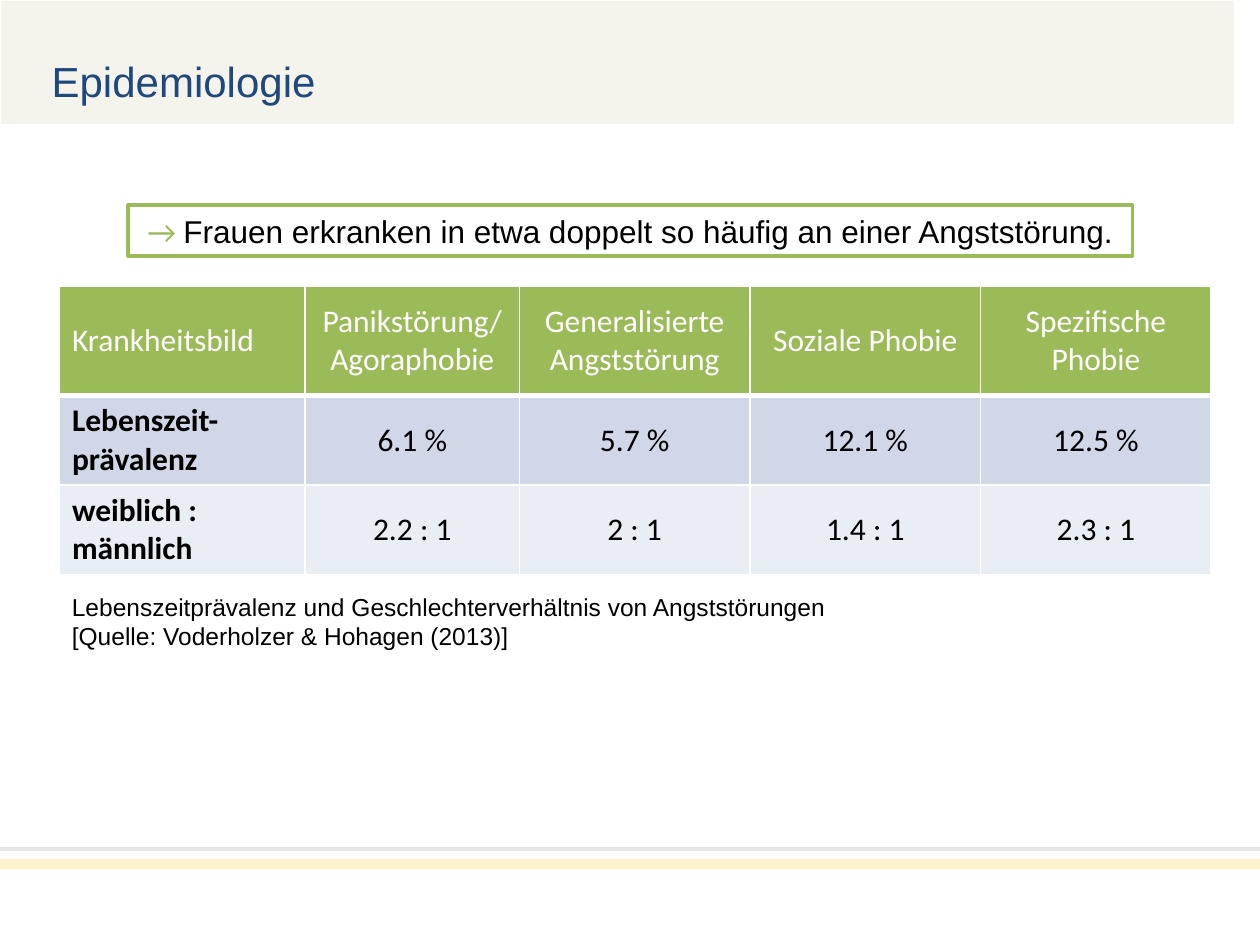
from dataclasses import dataclass

from lxml import etree
from pptx import Presentation
from pptx.dml.color import RGBColor
from pptx.enum.shapes import MSO_CONNECTOR, MSO_SHAPE
from pptx.enum.text import MSO_ANCHOR, PP_ALIGN
from pptx.oxml.ns import qn
from pptx.util import Pt

LEFT, CENTER = PP_ALIGN.LEFT, PP_ALIGN.CENTER
TOP, MIDDLE = MSO_ANCHOR.TOP, MSO_ANCHOR.MIDDLE
RECTANGLE, STRAIGHT = MSO_SHAPE.RECTANGLE, MSO_CONNECTOR.STRAIGHT
TITLE_ONLY = 5

GREEN, WHITE, BLACK = "9BBB59", "FFFFFF", "000000"
SLIDE_WIDTH, SLIDE_HEIGHT = 720, 540
MARGIN = 34
COLUMN_WIDTHS = [140.4, 122.4, 131.8, 131.8, 131.8]


@dataclass
class Box:
    left: float
    top: float
    width: float
    height: float

    def lengths(self) -> list:
        return [Pt(value) for value in (self.left, self.top, self.width, self.height)]


@dataclass
class Style:
    size: float
    font: str
    color: str
    bold: bool = False


@dataclass
class TableRow:
    height: float
    fill: str
    text_color: str
    bold_label: bool
    bottom_border: float
    texts: list[str]


ROWS = [
    TableRow(62.6, GREEN, WHITE, False, 3,
             ["Krankheitsbild", "Panikstörung/\nAgoraphobie", "Generalisierte\nAngststörung",
              "Soziale Phobie", "Spezifische Phobie"]),
    TableRow(50.4, "D0D8E8", BLACK, True, 1,
             ["Lebenszeit-prävalenz", "6.1 %", "5.7 %", "12.1 %", "12.5 %"]),
    TableRow(50.4, "E9EDF4", BLACK, True, 1,
             ["weiblich : männlich", "2.2 : 1", "2 : 1", "1.4 : 1", "2.3 : 1"]),
]


def rgb(color: str) -> RGBColor:
    return RGBColor.from_string(color)


def add_run(paragraph, text: str, style: Style) -> None:
    """Add text to the paragraph, turning newlines into line breaks."""
    for index, line in enumerate(text.split("\n")):
        if index:
            paragraph.add_line_break()
        run = paragraph.add_run()
        run.text = line
        run.font.size = Pt(style.size)
        run.font.name = style.font
        run.font.bold = style.bold
        run.font.color.rgb = rgb(style.color)


def add_rectangle(slide, box: Box, fill: str = "", line: str = "", line_width: float = 0):
    shape = slide.shapes.add_shape(RECTANGLE, *box.lengths())
    shape.shadow.inherit = False
    if fill:
        shape.fill.solid()
        shape.fill.fore_color.rgb = rgb(fill)
    else:
        shape.fill.background()
    if line:
        shape.line.color.rgb = rgb(line)
        shape.line.width = Pt(line_width)
    else:
        shape.line.fill.background()
    return shape


def add_title(slide, band) -> None:
    """Fill the title placeholder and keep it in front of the band."""
    title = slide.shapes.title
    title.left, title.top, title.width, title.height = Box(22.3, 28, 546, 36).lengths()
    title.text_frame.vertical_anchor = TOP
    paragraph = title.text_frame.paragraphs[0]
    paragraph.alignment = LEFT
    add_run(paragraph, "Epidemiologie", Style(24, "Arial", "1F497D"))
    title.element.addprevious(band.element)


def set_borders(cell, bottom_width: float) -> None:
    properties = cell._tc.get_or_add_tcPr()
    for side, width in (("lnL", 1), ("lnR", 1), ("lnT", 1), ("lnB", bottom_width)):
        border = etree.SubElement(properties, qn(f"a:{side}"), w=str(Pt(width)))
        fill = etree.SubElement(border, qn("a:solidFill"))
        etree.SubElement(fill, qn("a:srgbClr"), val=WHITE)


def add_prevalence_table(slide) -> None:
    box = Box(MARGIN, 163.4, sum(COLUMN_WIDTHS), sum(row.height for row in ROWS))
    table = slide.shapes.add_table(len(ROWS), len(COLUMN_WIDTHS), *box.lengths()).table
    for column, width in zip(table.columns, COLUMN_WIDTHS):
        column.width = Pt(width)
    for row_index, row in enumerate(ROWS):
        table.rows[row_index].height = Pt(row.height)
        for column_index, text in enumerate(row.texts):
            is_label = column_index == 0
            cell = table.cell(row_index, column_index)
            set_borders(cell, row.bottom_border)
            cell.fill.solid()
            cell.fill.fore_color.rgb = rgb(row.fill)
            cell.vertical_anchor = MIDDLE
            paragraph = cell.text_frame.paragraphs[0]
            paragraph.alignment = LEFT if is_label else CENTER
            bold = is_label and row.bold_label
            add_run(paragraph, text, Style(18, "Calibri", row.text_color, bold))


def add_caption(slide) -> None:
    box = Box(MARGIN, 334.8, sum(COLUMN_WIDTHS), 41)
    frame = slide.shapes.add_textbox(*box.lengths()).text_frame
    frame.word_wrap = True
    style = Style(14, "Arial", BLACK)
    add_run(frame.paragraphs[0],
            "Lebenszeitprävalenz und Geschlechterverhältnis von Angststörungen", style)
    add_run(frame.add_paragraph(), "[Quelle: Voderholzer & Hohagen (2013)]", style)


def add_key_message(slide) -> None:
    shape = add_rectangle(slide, Box(73.4, 117.4, 573.8, 28.8), line=GREEN, line_width=2.25)
    shape.text_frame.word_wrap = True
    shape.text_frame.vertical_anchor = TOP
    paragraph = shape.text_frame.paragraphs[0]
    paragraph.alignment = CENTER
    add_run(paragraph, "→ ", Style(18, "Calibri", GREEN))
    add_run(paragraph, "Frauen erkranken in etwa doppelt so häufig an einer Angststörung.",
            Style(18, "Arial", BLACK))


def add_footer(slide) -> None:
    line_top = Pt(485.3)
    line = slide.shapes.add_connector(STRAIGHT, 0, line_top, Pt(SLIDE_WIDTH), line_top)
    line.line.color.rgb = rgb("E7E6E6")
    line.line.width = Pt(2)
    etree.SubElement(line.element.spPr, qn("a:effectLst"))
    add_rectangle(slide, Box(0, 491, SLIDE_WIDTH, 5.8), fill="FFF2CC")


def main() -> None:
    presentation = Presentation()
    presentation.slide_width = Pt(SLIDE_WIDTH)
    presentation.slide_height = Pt(SLIDE_HEIGHT)
    slide = presentation.slides.add_slide(presentation.slide_layouts[TITLE_ONLY])
    band = add_rectangle(slide, Box(0, 0, 705.6, 71.3), "F4F3EC", WHITE, 0.75)
    add_title(slide, band)
    add_prevalence_table(slide)
    add_caption(slide)
    add_key_message(slide)
    add_footer(slide)
    presentation.save("out.pptx")


if __name__ == "__main__":
    main()
